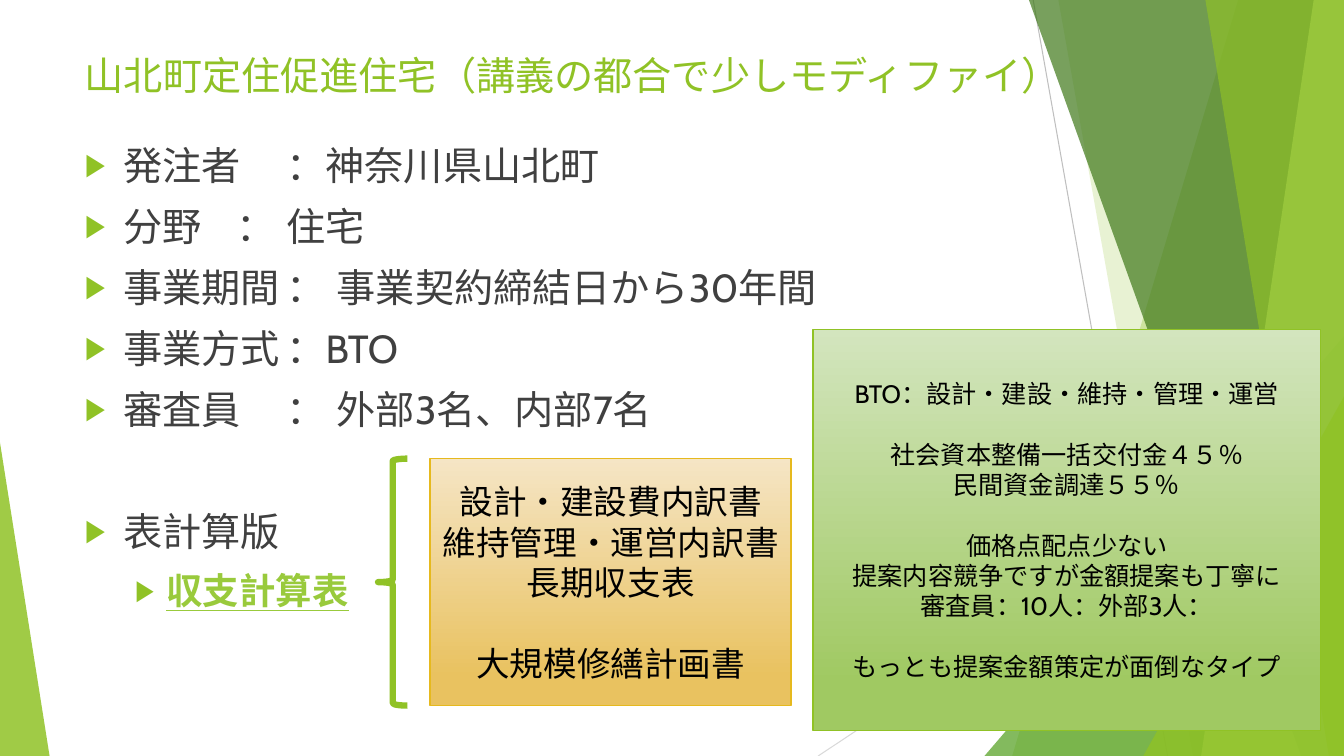
from dataclasses import dataclass

from lxml.etree import SubElement
from pptx import Presentation
from pptx.dml.color import RGBColor
from pptx.enum.shapes import MSO_CONNECTOR, MSO_SHAPE
from pptx.enum.text import MSO_ANCHOR, MSO_AUTO_SIZE, PP_ALIGN
from pptx.oxml.ns import qn
from pptx.util import Emu, Inches, Pt

# The slide is a grid of square cells, twelve to the inch
COLUMNS, ROWS = 160, 90
CELL = Inches(1) / 12
FONT = "Cabin"
LINE_HEIGHT = 1.2
COLORS = {
    "green": "90C226", "leaf": "54A021", "forest": "3F7819", "lime": "C0E474",
    "link": "99CA3C", "text": "404040", "black": "000000",
    "gray": "BFBFBF", "light gray": "D9D9D9",
    "pale green": "D3E5BE", "soft green": "A0C962",
    "pale gold": "F5E5C5", "soft gold": "E9C260", "gold": "E6B91E",
}


@dataclass
class Area:
    column: float
    row: float
    columns: float
    rows: float

    def lengths(self) -> list[Emu]:
        return [cells(n) for n in (self.column, self.row, self.columns, self.rows)]


@dataclass
class Stroke:
    start: tuple[float, float]
    end: tuple[float, float]
    color: str


@dataclass
class Blade:
    """Full-height facet reaching the right edge."""
    top: float
    bottom: float
    color: str
    opacity: int


@dataclass
class Wedge:
    """Right triangle standing on the bottom edge."""
    area: Area
    apex: float
    color: str
    opacity: int


@dataclass
class Item:
    text: str
    level: int = 0
    blank_lines: int = 0


@dataclass
class Panel:
    area: Area
    gradient: tuple[str, str]
    border: str
    size: int
    groups: list[list[str]]


STROKES = [
    Stroke((123, 0), (139, ROWS), "gray"),
    Stroke((COLUMNS, 48.4), (97.4, ROWS), "light gray"),
]
FACETS = [
    Blade(147.4, 120.5, "green", 30),
    Blade(126, 142, "green", 20),
    Wedge(Area(117.2, 40, 42.8, 50), 1, "leaf", 72),
    Blade(122.5, 154.9, "forest", 70),
    Blade(156.4, 143, "lime", 70),
    Blade(143.5, 158.2, "green", 65),
    Wedge(Area(136.1, 47.2, 23.9, 42.8), 1, "green", 80),
    Wedge(Area(0, 52.7, 5.9, 37.3), 0, "green", 85),
]
TITLE = "山北町定住促進住宅（講義の都合で少しモディファイ）"
ITEMS = [
    Item("発注者\t：神奈川県山北町"),
    Item("分野\t：\t住宅"),
    Item("事業期間\t：\t事業契約締結日から30年間"),
    Item("事業方式\t：BTO"),
    Item("審査員\t：\t外部3名、内部7名"),
    Item("表計算版", blank_lines=1),
    Item("収支計算表", level=1),
]
BTO_PANEL = Panel(
    Area(96.8, 39.2, 60.4, 47.8), ("pale green", "soft green"), "green", 18,
    [["BTO：設計・建設・維持・管理・運営"],
     ["社会資本整備一括交付金４５％", "民間資金調達５５％"],
     ["価格点配点少ない", "提案内容競争ですが金額提案も丁寧に", "審査員：10人：外部3人："],
     ["もっとも提案金額策定が面倒なタイプ"]])
SHEETS_PANEL = Panel(
    Area(51.2, 54.6, 43, 29.4), ("pale gold", "soft gold"), "gold", 24,
    [["設計・建設費内訳書", "維持管理・運営内訳書", "長期収支表"], ["大規模修繕計画書"]])


def cells(count: float) -> Emu:
    return Emu(round(count * CELL))


def rgb(name: str) -> RGBColor:
    return RGBColor.from_string(COLORS[name])


def format_runs(paragraph, size: float, color: str) -> None:
    for run in paragraph.runs:
        run.font.name, run.font.size = FONT, Pt(size)
        run.font.color.rgb = rgb(color)


def place(shape, area: Area) -> None:
    shape.left, shape.top, shape.width, shape.height = area.lengths()


def draw_stroke(slide, stroke: Stroke) -> None:
    points = [cells(n) for n in stroke.start + stroke.end]
    connector = slide.shapes.add_connector(MSO_CONNECTOR.STRAIGHT, *points)
    connector.line.color.rgb = rgb(stroke.color)
    connector.line.width = Pt(0.75)
    SubElement(connector.element.spPr, qn("a:effectLst"))


def draw_facet(slide, facet: Blade | Wedge) -> None:
    if isinstance(facet, Blade):
        builder = slide.shapes.build_freeform(cells(facet.top), 0)
        corners = [(COLUMNS, 0), (COLUMNS, ROWS), (facet.bottom, ROWS)]
        builder.add_line_segments([(cells(x), cells(y)) for x, y in corners])
        shape = builder.convert_to_shape()
    else:
        shape = slide.shapes.add_shape(MSO_SHAPE.ISOSCELES_TRIANGLE, *facet.area.lengths())
        shape.adjustments[0] = facet.apex
    shape.shadow.inherit = False
    shape.line.fill.background()
    shape.fill.solid()
    shape.fill.fore_color.rgb = rgb(facet.color)
    color = shape.element.spPr.find(qn("a:solidFill")).find(qn("a:srgbClr"))
    SubElement(color, qn("a:alpha"), val=str(facet.opacity * 1000))


def add_bullet(paragraph, margin: float, hanging: float) -> None:
    properties = paragraph._p.get_or_add_pPr()
    properties.set("marL", str(Inches(margin)))
    properties.set("indent", str(-Inches(hanging)))
    bullet_color = SubElement(properties, qn("a:buClr"))
    SubElement(bullet_color, qn("a:srgbClr"), val=COLORS["green"])
    SubElement(properties, qn("a:buSzPct"), val="80000")
    SubElement(properties, qn("a:buChar"), char="▶")


def fill_title(title) -> None:
    place(title, Area(8.9, 5.4, 123.1, 7))
    frame = title.text_frame
    frame.text = TITLE
    frame.auto_size = MSO_AUTO_SIZE.NONE
    frame.vertical_anchor = MSO_ANCHOR.MIDDLE
    frame.paragraphs[0].alignment = PP_ALIGN.LEFT
    format_runs(frame.paragraphs[0], 28, "green")


def fill_body(body) -> None:
    place(body, Area(8.9, 16.2, 145.7, 67.8))
    frame = body.text_frame
    frame.text = "\n".join(item.text for item in ITEMS)
    frame.auto_size = MSO_AUTO_SIZE.NONE
    for paragraph, item in zip(frame.paragraphs, ITEMS):
        paragraph.level = item.level
        paragraph.space_before = Pt(10 + item.blank_lines * (28 * LINE_HEIGHT + 10))
        if item.level:
            add_bullet(paragraph, 0.81, 0.31)
            format_runs(paragraph, 26, "link")
            paragraph.font.bold = True
            for run in paragraph.runs:
                run.font.bold = run.font.underline = True
        else:
            add_bullet(paragraph, 0.38, 0.38)
            format_runs(paragraph, 28, "text")


def draw_panel(slide, panel: Panel) -> None:
    shape = slide.shapes.add_shape(MSO_SHAPE.RECTANGLE, *panel.area.lengths())
    shape.shadow.inherit = False
    shape.line.color.rgb = rgb(panel.border)
    shape.line.width = Pt(1)
    shape.fill.gradient()
    shape.fill.gradient_angle = 270
    for stop, color, position in zip(shape.fill.gradient_stops, panel.gradient, (0, 0.88)):
        stop.color.rgb, stop.position = rgb(color), position
    frame = shape.text_frame
    frame.word_wrap = True
    frame.vertical_anchor = MSO_ANCHOR.MIDDLE
    frame.text = "\n".join(line for group in panel.groups for line in group)
    paragraphs = iter(frame.paragraphs)
    for group_index, group in enumerate(panel.groups):
        for line_index, paragraph in zip(range(len(group)), paragraphs):
            paragraph.alignment = PP_ALIGN.CENTER
            if group_index and not line_index:
                paragraph.space_before = Pt(panel.size * LINE_HEIGHT)
            format_runs(paragraph, panel.size, "black")


def draw_brace(slide) -> None:
    brace = slide.shapes.add_shape(MSO_SHAPE.LEFT_BRACE, *Area(45, 54.6, 3.5, 29.4).lengths())
    brace.shadow.inherit = False
    brace.fill.background()
    brace.line.color.rgb = rgb("green")
    brace.line.width = Pt(4.5)


def main() -> None:
    presentation = Presentation()
    presentation.slide_width, presentation.slide_height = cells(COLUMNS), cells(ROWS)
    slide = presentation.slides.add_slide(presentation.slide_layouts[1])
    title, body = slide.placeholders
    # Backdrop
    for stroke in STROKES:
        draw_stroke(slide, stroke)
    for facet in FACETS:
        draw_facet(slide, facet)
    # Title and list, brought in front of the backdrop
    for placeholder, fill in ((title, fill_title), (body, fill_body)):
        slide.shapes.element.append(placeholder.element)
        fill(placeholder)
    # Panels and brace
    draw_panel(slide, BTO_PANEL)
    draw_brace(slide)
    draw_panel(slide, SHEETS_PANEL)
    presentation.save("out.pptx")


if __name__ == "__main__":
    main()
